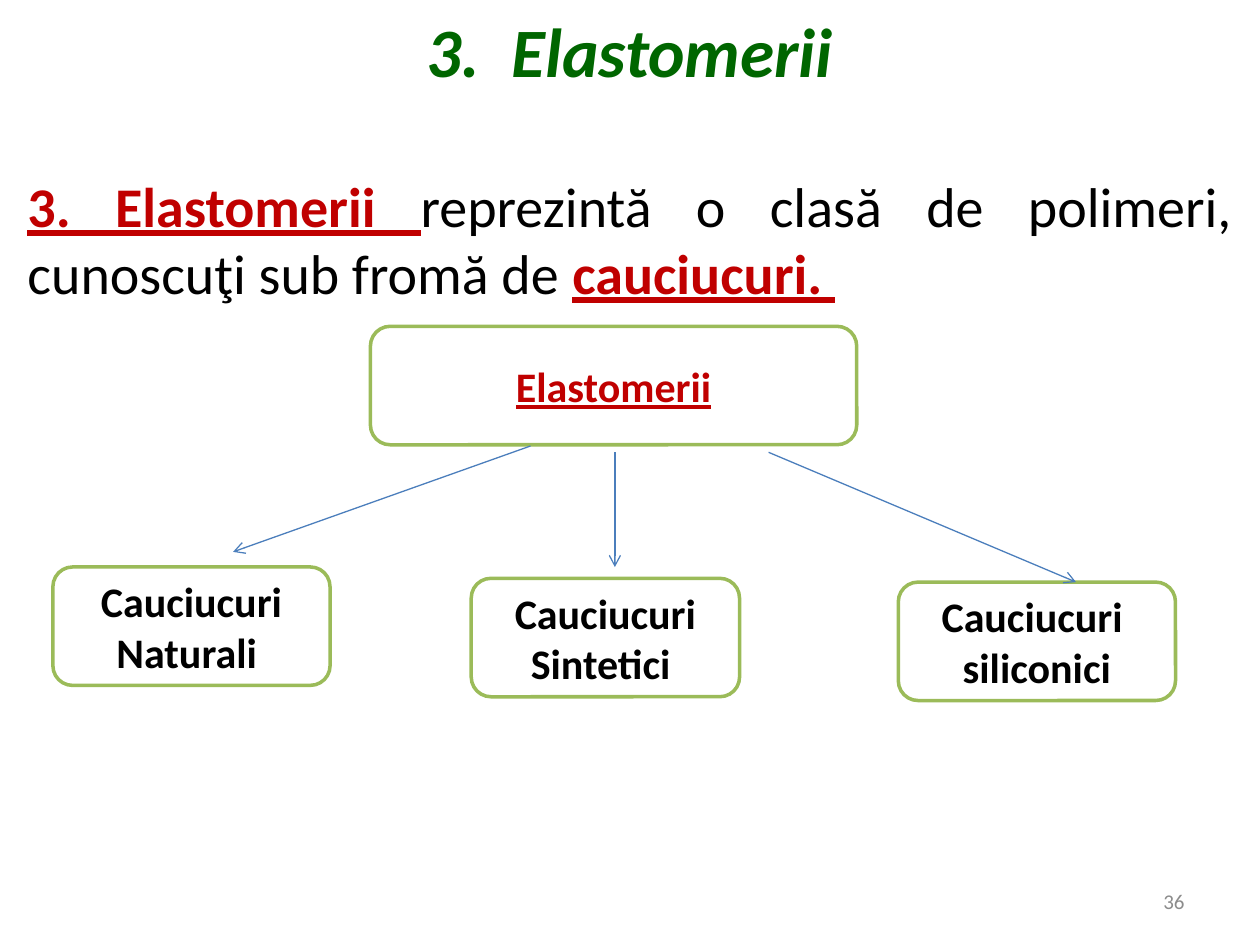
from lxml import etree
from pptx import Presentation
from pptx.dml.color import RGBColor
from pptx.enum import shapes, text
from pptx.oxml.ns import qn
from pptx.util import Inches, Pt

FONT = "Calibri"
DARK_GREEN = RGBColor(0x00, 0x66, 0x00)
RED = RGBColor(0xC0, 0x00, 0x00)
BLACK = RGBColor(0x00, 0x00, 0x00)
WHITE = RGBColor(0xFF, 0xFF, 0xFF)
GRAY = RGBColor(0x8C, 0x8C, 0x8C)
BOX_GREEN = RGBColor(0x9B, 0xBB, 0x59)
ARROW_BLUE = RGBColor(0x4B, 0x7E, 0xBC)

BOX_HEIGHT = 0.94
RUBBER_TYPES = [  # left, top, width, label
    (0.42, 4.5, 2.2, "Cauciucuri Naturali "),
    (3.74, 4.59, 2.13, "Cauciucuri Sintetici "),
    (7.13, 4.62, 2.2, "Cauciucuri  siliconici"),
]
ARROWS = [  # start, end
    ((4.21, 3.54), (1.85, 4.38)),
    ((4.88, 3.59), (4.88, 4.5)),
    ((6.1, 3.59), (8.54, 4.62)),
]


def format_run(run, size, color, bold=False, italic=False, underline=False):
    font = run.font
    font.name, font.size = FONT, Pt(size)
    font.bold, font.italic, font.underline = bold, italic, underline
    font.color.rgb = color


def add_title(slide, title):
    shape = slide.shapes.title
    shape.left, shape.top = Inches(0.5), Inches(0.05)
    shape.width, shape.height = Inches(9), Inches(0.69)
    frame = shape.text_frame
    frame.text = title
    frame.vertical_anchor = text.MSO_ANCHOR.MIDDLE
    frame.paragraphs[0].alignment = text.PP_ALIGN.CENTER
    format_run(frame.paragraphs[0].runs[0], 39.6, DARK_GREEN, bold=True, italic=True)


def add_text(slide, left, top, width, height, alignment, anchor):
    """Add a wrapping text box and return its paragraph."""
    box = slide.shapes.add_textbox(Inches(left), Inches(top), Inches(width), Inches(height))
    frame = box.text_frame
    frame.word_wrap = True
    frame.vertical_anchor = anchor
    frame.paragraphs[0].alignment = alignment
    return frame.paragraphs[0]


def add_definition(slide):
    paragraph = add_text(slide, 0.12, 1.31, 9.76, 5.91,
                         text.PP_ALIGN.JUSTIFY, text.MSO_ANCHOR.TOP)
    for words, is_term in [
        ("3. Elastomerii ", True),
        ("reprezintă o clasă de polimeri, cunoscuţi sub fromă de ", False),
        ("cauciucuri. ", True),
    ]:
        run = paragraph.add_run()
        run.text = words
        format_run(run, 32, RED if is_term else BLACK, bold=is_term, underline=is_term)


def add_page_number(slide, number):
    paragraph = add_text(slide, 7.17, 6.95, 2.33, 0.4,
                         text.PP_ALIGN.RIGHT, text.MSO_ANCHOR.MIDDLE)
    paragraph.text = number
    format_run(paragraph.runs[0], 12, GRAY)


def add_box(slide, left, top, width, label, color=BLACK, underline=False):
    shape = slide.shapes.add_shape(
        shapes.MSO_SHAPE.ROUNDED_RECTANGLE,
        Inches(left), Inches(top), Inches(width), Inches(BOX_HEIGHT))
    shape.shadow.inherit = False
    shape.fill.solid()
    shape.fill.fore_color.rgb = WHITE
    shape.line.color.rgb = BOX_GREEN
    shape.line.width = Pt(2)
    frame = shape.text_frame
    frame.word_wrap = True
    frame.vertical_anchor = text.MSO_ANCHOR.MIDDLE
    frame.text = label
    frame.paragraphs[0].alignment = text.PP_ALIGN.CENTER
    format_run(frame.paragraphs[0].runs[0], 24, color, bold=True, underline=underline)


def add_arrow(slide, start, end):
    connector = slide.shapes.add_connector(
        shapes.MSO_CONNECTOR.STRAIGHT, *(Inches(value) for value in start + end))
    connector.line.color.rgb = ARROW_BLUE
    connector.line.width = Pt(0.75)
    # Open arrowhead at the end, and no theme shadow
    etree.SubElement(connector.line._get_or_add_ln(), qn("a:tailEnd"), type="arrow")
    etree.SubElement(connector._element.spPr, qn("a:effectLst"))


def main():
    presentation = Presentation()
    presentation.slide_width, presentation.slide_height = Inches(10), Inches(7.5)
    slide = presentation.slides.add_slide(presentation.slide_layouts[5])

    # Heading, definition and page number
    add_title(slide, "3. \u00a0Elastomerii".replace("\u00a0", " "))
    add_definition(slide)
    add_page_number(slide, "36")

    # Tree: the class and its three kinds of rubber
    add_box(slide, 2.94, 2.59, 3.86, "Elastomerii", RED, underline=True)
    for left, top, width, label in RUBBER_TYPES:
        add_box(slide, left, top, width, label)
    for start, end in ARROWS:
        add_arrow(slide, start, end)

    presentation.save("out.pptx")


if __name__ == "__main__":
    main()
